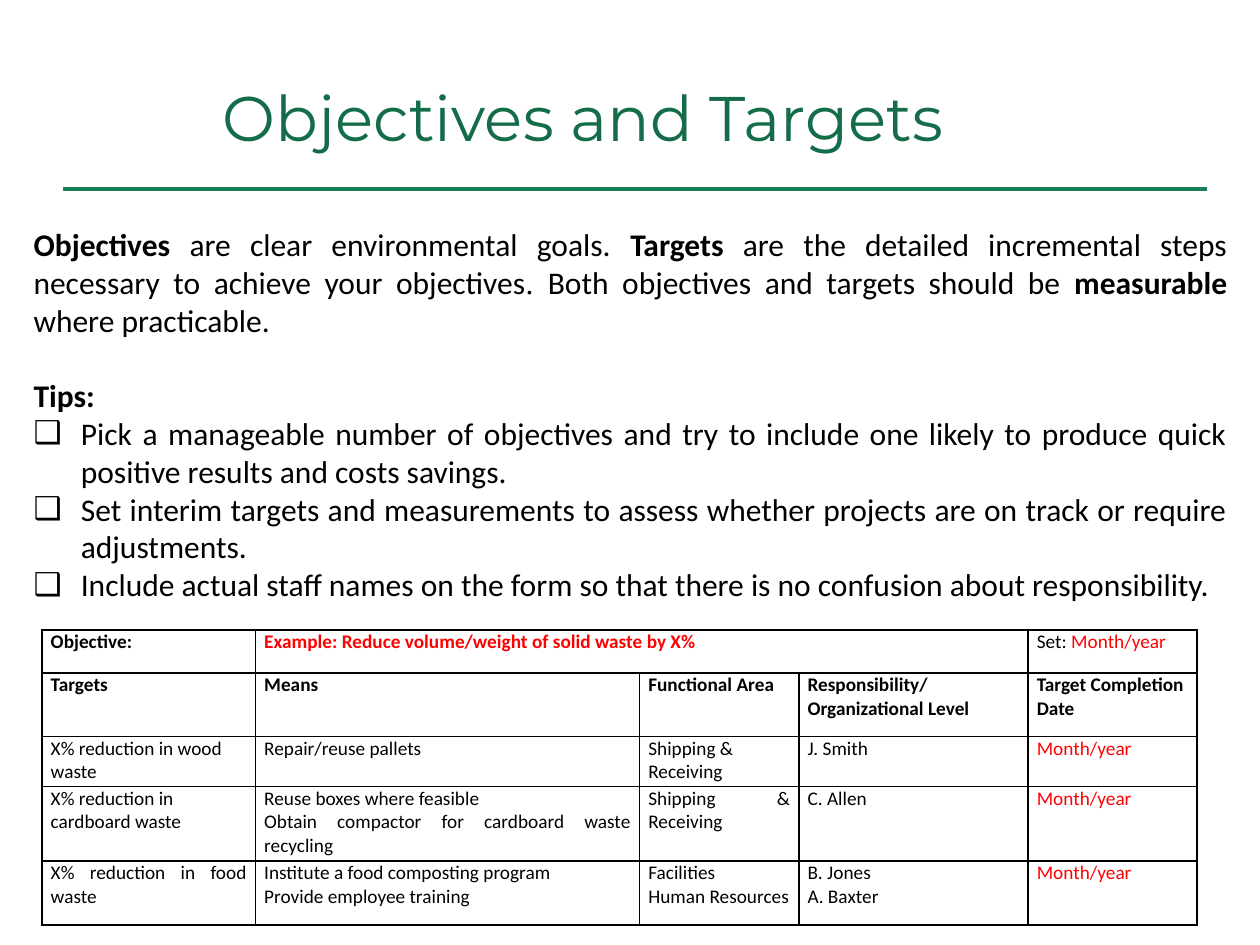
from lxml import etree
from pptx import Presentation
from pptx.dml.color import RGBColor
from pptx.enum.shapes import MSO_CONNECTOR as Connector
from pptx.enum.text import MSO_ANCHOR as Anchor, MSO_AUTO_SIZE as AutoSize, PP_ALIGN as Align
from pptx.oxml.ns import qn
from pptx.util import Pt

COLORS = {"title": "156C48", "rule": "187E55", "text": "000000", "example": "FF0000"}


def add_span(para, text, size, color="text", bold=False, font="Calibri"):
    span = para.add_run()
    span.text = text
    span.font.name = font
    span.font.size = Pt(size)
    span.font.bold = bold
    span.font.color.rgb = RGBColor.from_string(COLORS[color])


def add_border(cell, side):
    line = etree.SubElement(cell._tc.get_or_add_tcPr(), qn(f"a:{side}"), w=str(Pt(1)))
    fill = etree.SubElement(line, qn("a:solidFill"))
    etree.SubElement(fill, qn("a:srgbClr"), val=COLORS["text"])


deck = Presentation()
deck.slide_width, deck.slide_height = Pt(720), Pt(540)
page = deck.slides.add_slide(deck.slide_layouts[1])

# Title
title = page.shapes.title
title.left, title.top, title.width, title.height = Pt(120), Pt(21.6), Pt(564), Pt(90)
title.text_frame.vertical_anchor = Anchor.MIDDLE
para = title.text_frame.paragraphs[0]
para.alignment = Align.LEFT
add_span(para, "Objectives and Targets", 36, "title", font="Montserrat")

# Rule under the title
rule = page.shapes.add_connector(Connector.STRAIGHT, Pt(36), Pt(108), Pt(690), Pt(108))
rule.line.color.rgb = RGBColor.from_string(COLORS["rule"])
rule.line.width = Pt(2.25)
etree.SubElement(rule._element.spPr, qn("a:effectLst"))

# Introduction and tips: (text, bold, font) for each run
intro = [
    ("Objectives", True, "Calibri"),
    (" are clear environmental goals. ", False, "Calibri"),
    ("Targets", True, "Calibri"),
    (" are the detailed incremental steps necessary to achieve your objectives", False, "Calibri"),
    (". ", False, "Times New Roman"),
    ("Both objectives and targets should be ", False, "Calibri"),
    ("measurable", True, "Calibri"),
    (" where practicable.", False, "Calibri"),
]
tips = [
    "Pick a manageable number of objectives and try to include one likely to produce "
    "quick positive results and costs savings.",
    "Set interim targets and measurements to assess whether projects are on track or "
    "require adjustments.",
    "Include actual staff names on the form so that there is no confusion about responsibility.",
]
body_paragraphs = [intro, [("Tips:", True, "Calibri")]]
body_paragraphs += [[(tip, False, "Calibri")] for tip in tips]

body = page.placeholders[1]
body.left, body.top, body.width, body.height = Pt(12), Pt(125), Pt(696.5), Pt(224)
frame = body.text_frame
frame.word_wrap = True
frame.auto_size = AutoSize.NONE
for index, runs in enumerate(body_paragraphs):
    para = frame.paragraphs[0] if index == 0 else frame.add_paragraph()
    para.alignment = Align.LEFT if index == 1 else Align.JUSTIFY
    para.line_spacing = Pt(21.6)
    para.space_before = Pt(21.6 if index == 1 else 0)
    props = para._p.get_or_add_pPr()
    indent = Pt(27) if index > 1 else 0
    props.set("marL", str(indent))
    props.set("indent", str(-indent))
    if indent:
        etree.SubElement(props, qn("a:buChar"), char="❑")
    else:
        etree.SubElement(props, qn("a:buNone"))
    for text, bold, font in runs:
        add_span(para, text, 18, bold=bold, font=font)

# Table of targets: a line break starts a paragraph, a bar starts a run
rows = [
    ["Objective:", "Example: Reduce volume/weight of solid waste by X%", "", "", "Set: |Month/year"],
    ["Targets", "Means", "Functional Area", "Responsibility/\nOrganizational Level",
     "Target Completion Date"],
    ["X% reduction in wood waste", "Repair/reuse pallets", "Shipping & Receiving", "J. Smith",
     "Month/year"],
    ["X% reduction in cardboard waste",
     "Reuse boxes where feasible\nObtain compactor for cardboard waste recycling",
     "Shipping & Receiving", "C. Allen", "Month/year"],
    ["X% reduction in food waste",
     "Institute a food composting program\nProvide employee training",
     "Facilities\nHuman Resources", "B. Jones\nA. Baxter", "Month/year"],
]
left_aligned = {(1, 4), (2, 0), (2, 2), (3, 0)}
column_widths = [122, 219.5, 91, 131, 96.5]
row_heights = [24.5, 36.5, 28.5, 42.5, 36.5]

table = page.shapes.add_table(len(rows), len(column_widths), Pt(24), Pt(360),
                              Pt(sum(column_widths)), Pt(sum(row_heights))).table
table.first_row = table.horz_banding = False
for column, width in zip(table.columns, column_widths):
    column.width = Pt(width)
for row, height in zip(table.rows, row_heights):
    row.height = Pt(height)
table.cell(0, 1).merge(table.cell(0, 3))

for r, row in enumerate(rows):
    for c, content in enumerate(row):
        cell = table.cell(r, c)
        cell.margin_left = cell.margin_right = Pt(5)
        cell.margin_top = cell.margin_bottom = 0
        for side in ("lnL", "lnR", "lnT", "lnB"):
            add_border(cell, side)
        cell.fill.background()
        if cell.is_spanned:
            continue
        for index, line in enumerate(content.split("\n")):
            para = cell.text_frame.paragraphs[0] if index == 0 else cell.text_frame.add_paragraph()
            para.alignment = Align.LEFT if (r, c) in left_aligned else Align.JUSTIFY
            for text in line.split("|"):
                color = "example" if text.startswith(("Example", "Month")) else "text"
                add_span(para, text, 11, color, bold=r < 2 and (r, c) != (0, 4))

deck.save("out.pptx")
